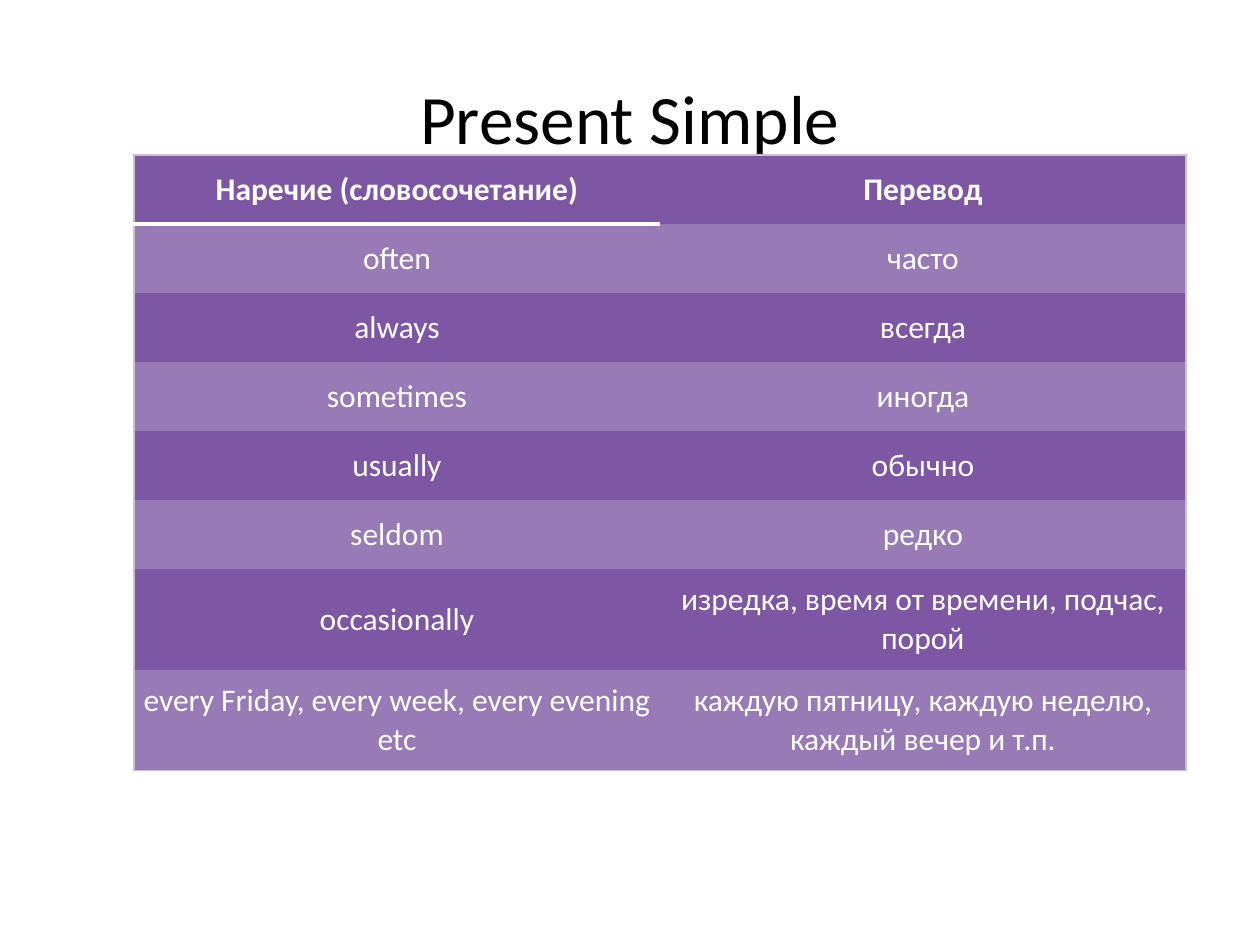
from collections import namedtuple
from dataclasses import dataclass

from lxml.etree import SubElement
from pptx import Presentation
from pptx.dml.color import RGBColor
from pptx.enum.text import MSO_ANCHOR as Anchor, PP_ALIGN as Align
from pptx.oxml.ns import qn
from pptx.util import Inches, Pt

PX = Inches(1) / 126
Box = namedtuple("Box", "left top width height")


@dataclass(frozen=True)
class Theme:
    font: str = "Calibri"
    title_size: float = 39.6
    body_size: float = 18
    title: str = "000000"
    body: str = "FFFFFF"
    dark_row: str = "7D57A4"
    light_row: str = "977AB6"
    outline: str = "C8C1D3"
    outline_width: float = 0.75
    header_rule: str = "FFFFFF"
    header_rule_width: float = 3


THEME = Theme()
NO_TABLE_STYLE = "{2D5ABB26-0587-4C30-8999-92F81FD0307C}"
ADVERBS = [
    ("Наречие (словосочетание)", "Перевод"),
    ("often", "часто"),
    ("always", "всегда"),
    ("sometimes", "иногда"),
    ("usually", "обычно"),
    ("seldom", "редко"),
    ("occasionally", "изредка, время от времени, подчас, порой"),
    ("every Friday, every week, every evening etc",
     "каждую пятницу, каждую неделю, каждый вечер и т.п."),
]
ROW_HEIGHTS = [69] * 6 + [101] * 2


def px(length):
    return round(length * PX)


def write(text_frame, text, size, color, bold=False):
    text_frame.text = text
    paragraph = text_frame.paragraphs[0]
    paragraph.alignment = Align.CENTER
    font = paragraph.runs[0].font
    font.name, font.size, font.bold = THEME.font, Pt(size), bold
    font.color.rgb = RGBColor.from_string(color)


def add_border(cell, side, color, width):
    """Draw one side of a cell; sides must come in the order L, R, T, B."""
    properties = cell._tc.get_or_add_tcPr()
    line = SubElement(properties, qn(f"a:ln{side}"), w=str(Pt(width)))
    fill = SubElement(line, qn("a:solidFill"))
    SubElement(fill, qn("a:srgbClr"), val=color)


def add_title(slide, box, text):
    shape = slide.shapes.add_textbox(*map(px, box))
    shape.text_frame.word_wrap = True
    shape.text_frame.vertical_anchor = Anchor.MIDDLE
    write(shape.text_frame, text, THEME.title_size, THEME.title)


def add_adverb_table(slide, box, rows, heights):
    row_count, column_count = len(rows), len(rows[0])
    table = slide.shapes.add_table(row_count, column_count, *map(px, box)).table
    table._tbl.tblPr.find(qn("a:tableStyleId")).text = NO_TABLE_STYLE
    table.horz_banding = False
    for column in table.columns:
        column.width = px(box.width / column_count)

    for r, (texts, height) in enumerate(zip(rows, heights)):
        table.rows[r].height = px(height)
        for c, text in enumerate(texts):
            cell = table.cell(r, c)
            cell.vertical_anchor = Anchor.MIDDLE
            cell.margin_left = cell.margin_right = 0
            cell.margin_top = cell.margin_bottom = 0
            write(cell.text_frame, text, THEME.body_size, THEME.body, bold=r == 0)

            outer_sides = {"L": c == 0, "R": c == column_count - 1,
                           "T": r == 0, "B": r == row_count - 1}
            for side, is_outer in outer_sides.items():
                if is_outer:
                    add_border(cell, side, THEME.outline, THEME.outline_width)
            if r == 0 and c == 0:
                add_border(cell, "B", THEME.header_rule, THEME.header_rule_width)

            cell.fill.solid()
            color = THEME.light_row if r % 2 else THEME.dark_row
            cell.fill.fore_color.rgb = RGBColor.from_string(color)


def main():
    presentation = Presentation()
    presentation.slide_width, presentation.slide_height = px(1260), px(945)
    slide = presentation.slides.add_slide(presentation.slide_layouts[6])
    add_title(slide, Box(63, 38, 1134, 157), "Present Simple")
    add_adverb_table(slide, Box(134, 155, 1052, sum(ROW_HEIGHTS)), ADVERBS, ROW_HEIGHTS)
    presentation.save("out.pptx")


if __name__ == "__main__":
    main()
